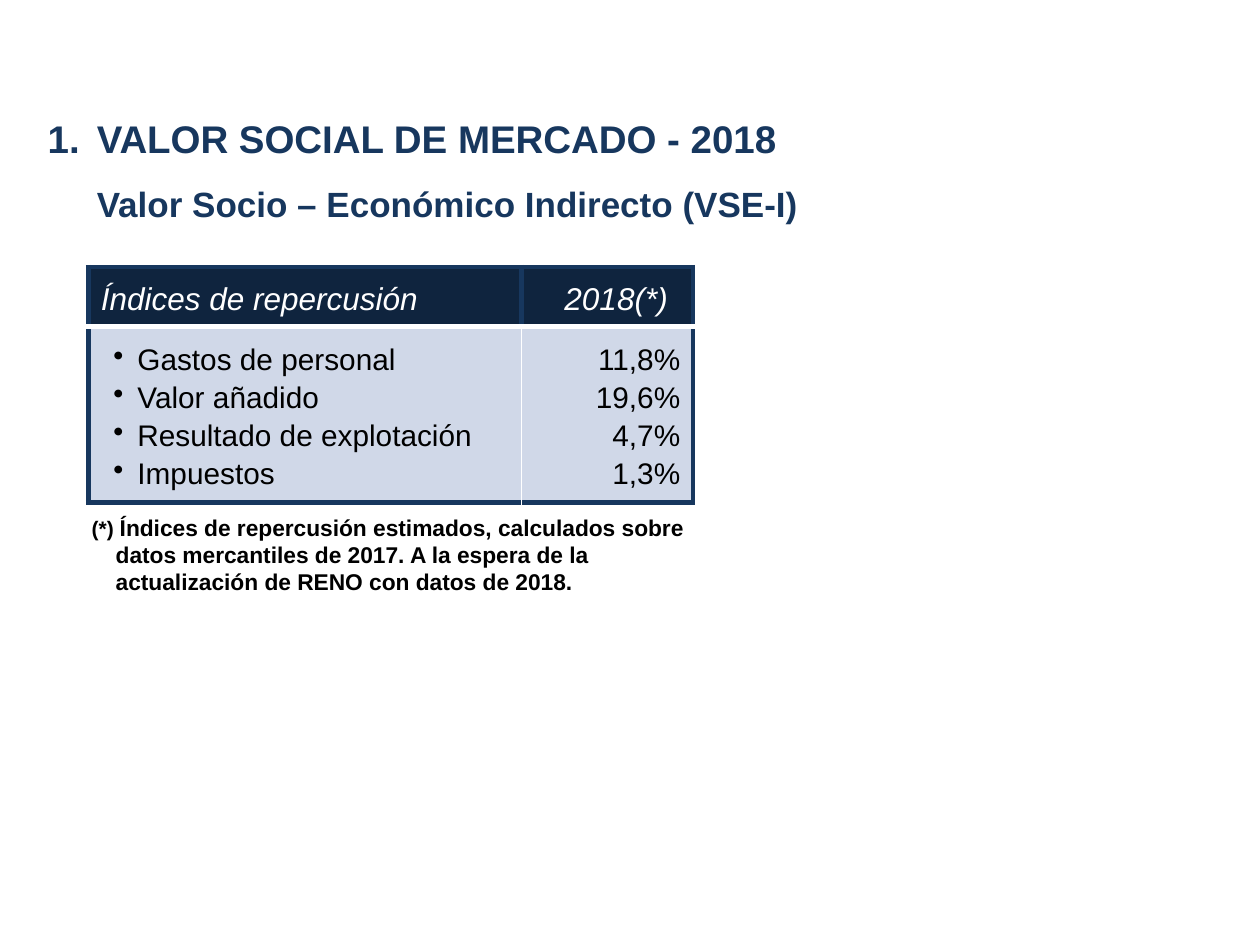
from dataclasses import dataclass

from lxml.etree import SubElement
from pptx import Presentation
from pptx.dml.color import RGBColor
from pptx.enum.shapes import MSO_SHAPE
from pptx.enum.text import MSO_ANCHOR, PP_ALIGN
from pptx.oxml.ns import qn
from pptx.util import Inches, Pt


@dataclass(frozen=True)
class Theme:
    """Colours, type sizes and line weights of the slide."""
    font: str = "Arial"
    navy: str = "17375E"
    header: str = "0F243E"
    body: str = "D0D8E8"
    white: str = "FFFFFF"
    black: str = "000000"
    title: int = 22
    subtitle: int = 20
    heading: int = 18
    entry: int = 17
    note: int = 13
    marker: int = 12
    frame: int = 3
    rule: int = 1


THEME = Theme()
WIDTH, HEIGHT = Inches(10), Inches(7.5)
COLUMNS, ROWS = 100, 75
INDICES = [
    ("Gastos de personal", "11,8%"),
    ("Valor añadido", "19,6%"),
    ("Resultado de explotación", "4,7%"),
    ("Impuestos", "1,3%"),
]


def across(columns):
    """Turn grid columns into a length."""
    return round(columns * WIDTH / COLUMNS)


def down(rows):
    """Turn grid rows into a length."""
    return round(rows * HEIGHT / ROWS)


def grid_box(column, row, columns, rows):
    """Return left, top, width and height of a grid area."""
    return across(column), down(row), across(columns), down(rows)


def apply_format(target, values):
    """Set every attribute named in a dict of format values."""
    for name, value in values.items():
        setattr(target, name, value)


def paint(fill, colour):
    """Give a fill one solid colour."""
    fill.solid()
    fill.fore_color.rgb = RGBColor.from_string(colour)


def add_words(paragraph, words, size, colour, **style):
    """Add a run of text in the theme font."""
    run = paragraph.add_run()
    run.text = words
    apply_format(run.font, {"name": THEME.font, "size": Pt(size), **style})
    run.font.color.rgb = RGBColor.from_string(colour)


def next_paragraph(frame, margin=0, indent=0, bullet=None, **layout):
    """Start a paragraph with its layout, indents in columns and bullet."""
    first = frame.paragraphs[0]
    paragraph = frame.add_paragraph() if first.runs else first
    apply_format(paragraph, layout)
    properties = paragraph._p.get_or_add_pPr()
    properties.set("marL", str(across(margin)))
    properties.set("indent", str(across(indent)))
    if bullet:
        kind, key, value = bullet
        SubElement(properties, qn(kind)).set(key, value)
    return paragraph


def add_heading(slide):
    """Add the numbered title with its subtitle."""
    frame = slide.shapes.add_textbox(*grid_box(2.8, 6.8, 93.7, 11)).text_frame
    frame.word_wrap = True
    style = {"colour": THEME.navy, "bold": True}
    title = next_paragraph(frame, 3.9, -3.9, ("a:buAutoNum", "type", "arabicPeriod"),
                           line_spacing=1.5)
    add_words(title, "VALOR SOCIAL DE MERCADO - 2018", THEME.title, **style)
    subtitle = next_paragraph(frame, indent=3.9, line_spacing=1.5)
    add_words(subtitle, "Valor Socio – Económico Indirecto (VSE-I)", THEME.subtitle, **style)


def style_cell(cell, colour, borders):
    """Draw the borders of a cell, then fill it."""
    cell.vertical_anchor = MSO_ANCHOR.MIDDLE
    properties = cell._tc.get_or_add_tcPr()
    for side, (line_colour, weight) in zip("LRTB", borders):
        line = SubElement(properties, qn(f"a:ln{side}"), w=str(Pt(weight)))
        SubElement(SubElement(line, qn("a:solidFill")), qn("a:srgbClr"), val=line_colour)
    paint(cell.fill, colour)


def add_index_table(slide):
    """Add the table of indices and their percentages."""
    table = slide.shapes.add_table(2, 2, *grid_box(7, 21.2, 48.1, 18.7)).table
    for column, columns in zip(table.columns, (34.4, 13.6)):
        column.width = across(columns)
    for row, rows in zip(table.rows, (4.7, 14)):
        row.height = down(rows)

    outer, inner = (THEME.navy, THEME.frame), (THEME.white, THEME.rule)
    divider = (THEME.white, THEME.frame)
    alignments = (PP_ALIGN.LEFT, PP_ALIGN.RIGHT)
    body_sides = ((outer, inner), (inner, outer))
    bullets = ({"margin": 2.9, "indent": -1.9, "bullet": ("a:buChar", "char", "•")}, {})
    for column, heading in enumerate(("Índices de repercusión", "2018(*)")):
        top, bottom = table.cell(0, column), table.cell(1, column)
        style_cell(top, THEME.header, (outer, outer, outer, divider))
        style_cell(bottom, THEME.body, (*body_sides[column], inner, outer))
        layout = {"alignment": alignments[column], "line_spacing": 1.14}
        add_words(next_paragraph(top.text_frame, **layout), heading,
                  THEME.heading, THEME.white, italic=True)
        for entry in INDICES:
            add_words(next_paragraph(bottom.text_frame, **bullets[column], **layout),
                      entry[column], THEME.entry, THEME.black)
    table.cell(0, 1).margin_right = across(2)


def add_footnote(slide):
    """Add the note under the table."""
    note = slide.shapes.add_shape(MSO_SHAPE.RECTANGLE, *grid_box(6.3, 40.2, 50.3, 7.6))
    note.shadow.inherit = False
    paint(note.fill, THEME.white)
    note.line.fill.background()
    apply_format(note.text_frame, {"word_wrap": True, "vertical_anchor": MSO_ANCHOR.MIDDLE})
    paragraph = next_paragraph(note.text_frame, 1.9, -1.9, level=1, alignment=PP_ALIGN.LEFT)
    add_words(paragraph, "(*) ", THEME.marker, THEME.black, bold=True)
    add_words(paragraph, "Índices de repercusión estimados, calculados sobre datos mercantiles "
              "de 2017. A la espera de la actualización de RENO con datos de 2018.",
              THEME.note, THEME.black, bold=True)


def main():
    """Build the slide and save it."""
    presentation = Presentation()
    apply_format(presentation, {"slide_width": WIDTH, "slide_height": HEIGHT})
    slide = presentation.slides.add_slide(presentation.slide_layouts[6])
    add_heading(slide)
    add_index_table(slide)
    add_footnote(slide)
    presentation.save("out.pptx")


if __name__ == "__main__":
    main()
